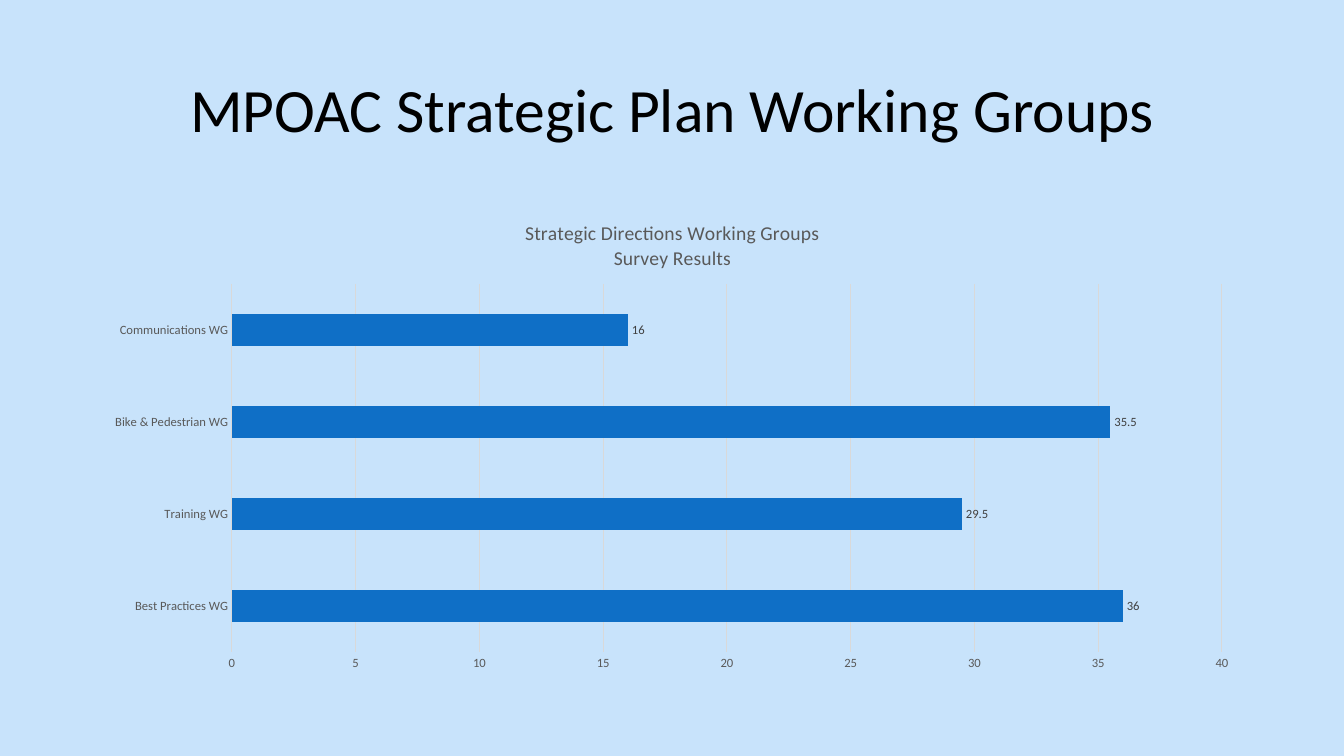
"""Build the working groups survey slide with its bar chart."""
from lxml.etree import SubElement
from pptx import Presentation
from pptx.chart.data import CategoryChartData
from pptx.dml.color import RGBColor
from pptx.enum.chart import XL_CHART_TYPE as ChartType
from pptx.enum.chart import XL_LABEL_POSITION as LabelPosition
from pptx.enum.chart import XL_TICK_MARK as TickMark
from pptx.enum.text import MSO_ANCHOR as Anchor
from pptx.enum.text import PP_ALIGN as Align
from pptx.oxml.ns import qn
from pptx.util import Emu, Pt

TITLE = "MPOAC Strategic Plan Working Groups"
CHART_TITLE = "Strategic Directions Working Groups\nSurvey Results"
SURVEY = {
    "Best Practices WG": 36,
    "Training WG": 29.5,
    "Bike & Pedestrian WG": 35.5,
    "Communications WG": 16,
}

SLIDE_SIZE = (1344, 756)
TITLE_BOX = (93, 40, 1159, 146)
CHART_BOX = (93, 202, 1159, 480)
PLOT_BOX = (232, 284, 990, 368)
EMU_PER_PX = 914400 / 100.8

FONT = "Calibri"
BACKGROUND = RGBColor(0xC8, 0xE3, 0xFB)
BLACK = RGBColor(0x00, 0x00, 0x00)
BAR_BLUE = RGBColor(0x0F, 0x6F, 0xC6)
AXIS_GRAY = RGBColor(0x59, 0x59, 0x59)
LABEL_GRAY = RGBColor(0x40, 0x40, 0x40)
GRID_GRAY = RGBColor(0xD9, 0xD9, 0xD9)


def px(length):
    return Emu(round(length * EMU_PER_PX))


def set_font(font, size, color):
    font.name, font.size, font.bold = FONT, Pt(size), False
    font.color.rgb = color


def write_text(frame, text, size, color, align=Align.CENTER, spacing=None):
    frame.text = text
    for paragraph in frame.paragraphs:
        paragraph.alignment = align
        paragraph.line_spacing = spacing
        for run in paragraph.runs:
            set_font(run.font, size, color)


def set_line(line, color):
    line.color.rgb = color
    line.width = Pt(0.75)


def place_plot(chart):
    plot_area = chart._chartSpace.chart.plotArea
    layout = plot_area.find(qn("c:layout"))
    if layout is None:
        layout = SubElement(plot_area, qn("c:layout"))
        plot_area.insert(0, layout)
    manual = SubElement(layout, qn("c:manualLayout"))
    left, top, width, height = CHART_BOX
    plot_left, plot_top, plot_width, plot_height = PLOT_BOX
    settings = {
        "layoutTarget": "inner",
        "xMode": "edge",
        "yMode": "edge",
        "x": round((plot_left - left) / width, 4),
        "y": round((plot_top - top) / height, 4),
        "w": round(plot_width / width, 4),
        "h": round(plot_height / height, 4),
    }
    for name, value in settings.items():
        SubElement(manual, qn(f"c:{name}")).set("val", str(value))


def add_title(slide):
    title = slide.shapes.title
    title.left, title.top, title.width, title.height = map(px, TITLE_BOX)
    title.text_frame.vertical_anchor = Anchor.MIDDLE
    write_text(title.text_frame, TITLE, 44, BLACK, spacing=0.9)


def add_survey_chart(slide):
    data = CategoryChartData()
    data.categories = list(SURVEY)
    data.add_series("Series 1", list(SURVEY.values()))
    chart = slide.shapes.add_chart(
        ChartType.BAR_CLUSTERED, *map(px, CHART_BOX), data
    ).chart
    set_font(chart.font, 10, BLACK)
    chart.has_legend = False
    chart.has_title = True
    write_text(chart.chart_title.text_frame, CHART_TITLE, 14, AXIS_GRAY)
    chart.chart_title.include_in_layout = False

    for axis in (chart.category_axis, chart.value_axis):
        axis.major_tick_mark = axis.minor_tick_mark = TickMark.NONE
        set_font(axis.tick_labels.font, 9, AXIS_GRAY)
    set_line(chart.category_axis.format.line, GRID_GRAY)
    values = chart.value_axis
    values.minimum_scale, values.maximum_scale, values.major_unit = 0, 40, 5
    values.format.line.fill.background()
    values.has_major_gridlines = True
    set_line(values.major_gridlines.format.line, GRID_GRAY)

    plot = chart.plots[0]
    plot.gap_width = 182
    plot.vary_by_categories = False
    series = plot.series[0]
    series.format.fill.solid()
    series.format.fill.fore_color.rgb = BAR_BLUE
    labels = series.data_labels
    labels.show_value = True
    labels.position = LabelPosition.OUTSIDE_END
    set_font(labels.font, 9, LABEL_GRAY)
    place_plot(chart)


def main():
    presentation = Presentation()
    presentation.slide_width, presentation.slide_height = map(px, SLIDE_SIZE)
    slide = presentation.slides.add_slide(presentation.slide_layouts[5])
    slide.background.fill.solid()
    slide.background.fill.fore_color.rgb = BACKGROUND
    add_title(slide)
    add_survey_chart(slide)
    presentation.save("out.pptx")


if __name__ == "__main__":
    main()
